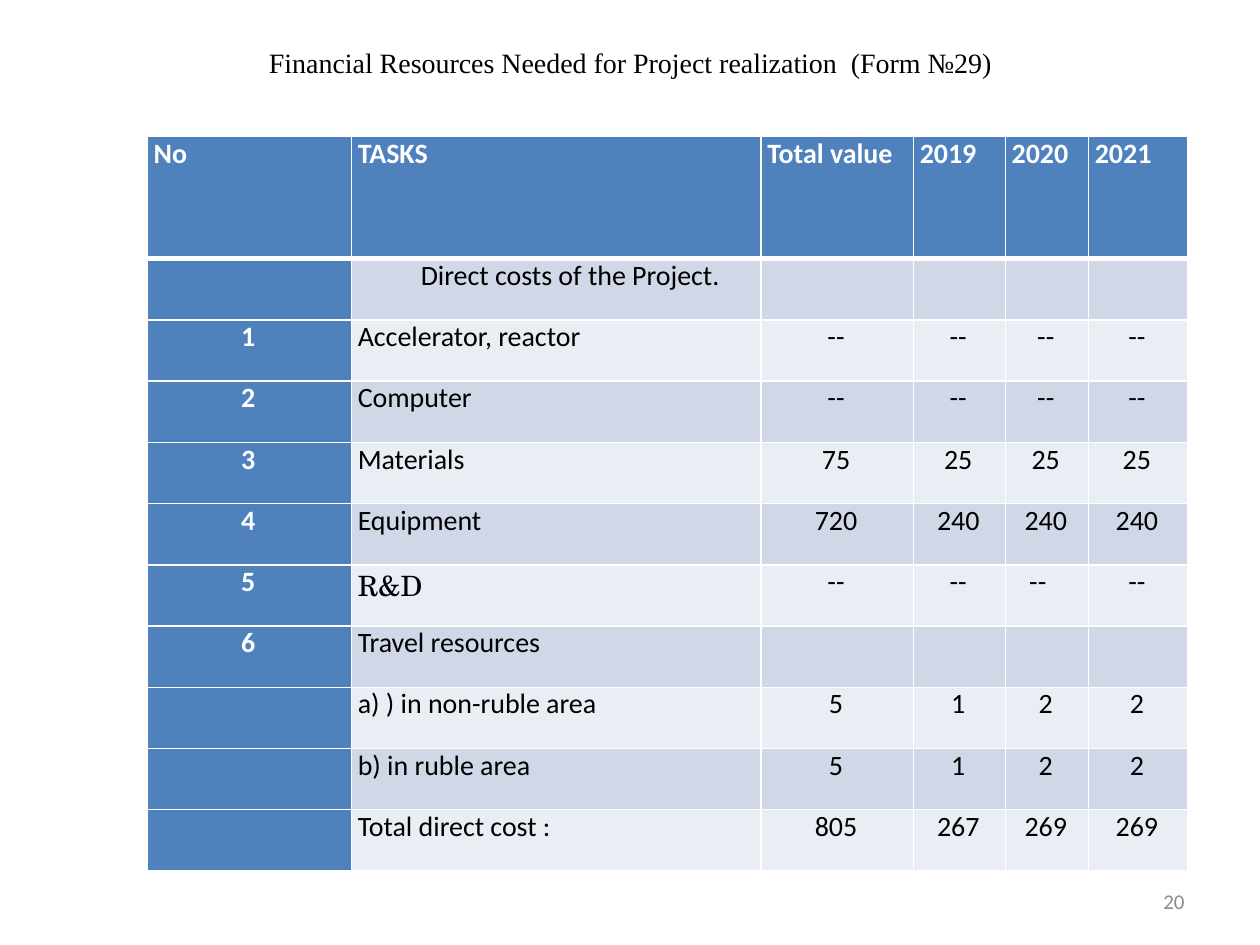
"""Build a slide with a table of the financial resources a project needs."""
import pptx
import pptx.dml.color
import pptx.enum.text
import pptx.oxml
import pptx.oxml.ns
import pptx.util
from lxml import etree

Pt = pptx.util.Pt
PP_ALIGN = pptx.enum.text.PP_ALIGN
MSO_ANCHOR = pptx.enum.text.MSO_ANCHOR
RGB = pptx.dml.color.RGBColor.from_string

THEME = {
    "body": "Calibri", "serif": "Times New Roman", "school": "TeX Gyre Schola",
    "text_size": 16, "number_size": 12,
    "white": "FFFFFF", "black": "000000", "ink": "00000A", "grey": "8C8C8C",
    "accent": "4F81BD", "bands": ("D0D8E8", "E9EDF4"),
}


def write(tf, text, font=THEME["body"], size=THEME["text_size"],
          color=THEME["black"], bold=False, align=PP_ALIGN.LEFT, indent=0):
    p = tf.paragraphs[0]
    p.alignment = align
    if indent:
        p._p.get_or_add_pPr().set("marL", str(Pt(indent)))
    r = p.add_run()
    r.text = text
    r.font.name = font
    r.font.size = Pt(size)
    r.font.bold = bold
    r.font.color.rgb = RGB(color)


def add_border(cell, side, width):
    tc_pr = cell._tc.get_or_add_tcPr()
    ln = etree.SubElement(tc_pr, pptx.oxml.ns.qn(f"a:ln{side}"), w=str(Pt(width)))
    fill = etree.SubElement(ln, pptx.oxml.ns.qn("a:solidFill"))
    etree.SubElement(fill, pptx.oxml.ns.qn("a:srgbClr"), val=THEME["white"])


rows = [
    ("No", "TASKS", "Total value", "2019", "2020", "2021"),
    ("", "Direct costs of the Project.", "", "", "", ""),
    ("1", "Accelerator, reactor", "--", "--", "--", "--"),
    ("2", "Computer", "--", "--", "--", "--"),
    ("3", "Materials", "75", "25", "25", "25"),
    ("4", "Equipment", "720", "240", "240", "240"),
    ("5", "R&D", "--", "--", "--", "--"),
    ("6", "Travel resources", "", "", "", ""),
    ("", "a) ) in non-ruble area", "5", "1", "2", "2"),
    ("", "b) in ruble area", "5", "1", "2", "2"),
    ("", "Total direct cost :", "805", "267", "269", "269"),
]
col_widths = [116.64, 234, 87.12, 52.56, 47.52, 56.6]
header_height, row_height = 70, 35
special_formats = {
    (1, 1): {"indent": 36},
    (6, 1): {"font": THEME["school"], "color": THEME["ink"]},
    (6, 4): {"align": PP_ALIGN.LEFT, "indent": 10},
}

prs = pptx.Presentation()
prs.slide_width, prs.slide_height = Pt(720), Pt(540)
s = prs.slides.add_slide(prs.slide_layouts[6])

table_height = header_height + row_height * (len(rows) - 1)
table = s.shapes.add_table(len(rows), len(col_widths), Pt(84.24), Pt(77.9),
                           Pt(sum(col_widths)), Pt(table_height)).table
table.first_col = True
for column, width in zip(table.columns, col_widths):
    column.width = Pt(width)

for i, values in enumerate(rows):
    header = i == 0
    table.rows[i].height = Pt(header_height if header else row_height)
    for j, value in enumerate(values):
        cell = table.cell(i, j)
        accent = header or j == 0
        cell.margin_left, cell.margin_right = Pt(3.6), Pt(5)
        cell.margin_top = cell.margin_bottom = 0
        for side in "LRTB":
            thick = (header and side == "B") or (i == 1 and side == "T")
            add_border(cell, side, 3 if thick else 1)
        cell.fill.solid()
        cell.fill.fore_color.rgb = RGB(
            THEME["accent"] if accent else THEME["bands"][(i - 1) % 2])
        if value:
            style = {
                "color": THEME["white"] if accent else THEME["black"],
                "bold": accent,
                "align": PP_ALIGN.LEFT if header or j == 1 else PP_ALIGN.CENTER,
            }
            write(cell.text_frame, value, **{**style, **special_formats.get((i, j), {})})

title = s.shapes.add_textbox(Pt(143.3), Pt(22.3), Pt(434), Pt(26.6))
tf = title.text_frame
tf.word_wrap = False
tf.auto_size = pptx.enum.text.MSO_AUTO_SIZE.SHAPE_TO_FIT_TEXT
tf.vertical_anchor = MSO_ANCHOR.MIDDLE
write(tf, "Financial Resources Needed for Project realization  (Form №29)",
      font=THEME["serif"], color=THEME["ink"], align=PP_ALIGN.CENTER)

slide_number = s.shapes.add_textbox(Pt(516), Pt(500.5), Pt(168), Pt(28.75))
tf = slide_number.text_frame
tf.word_wrap = True
tf.vertical_anchor = MSO_ANCHOR.MIDDLE
write(tf, "20", size=THEME["number_size"], color=THEME["grey"], align=PP_ALIGN.RIGHT)

prs.save("out.pptx")
